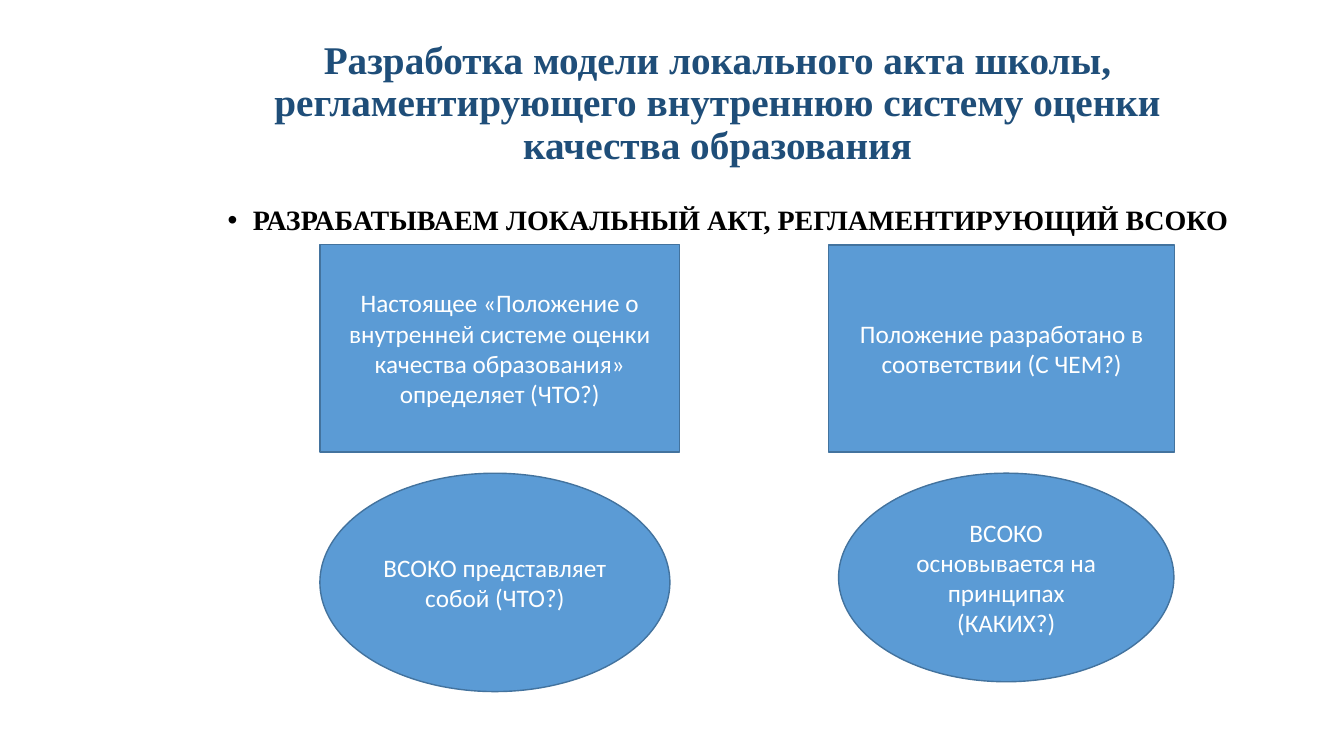
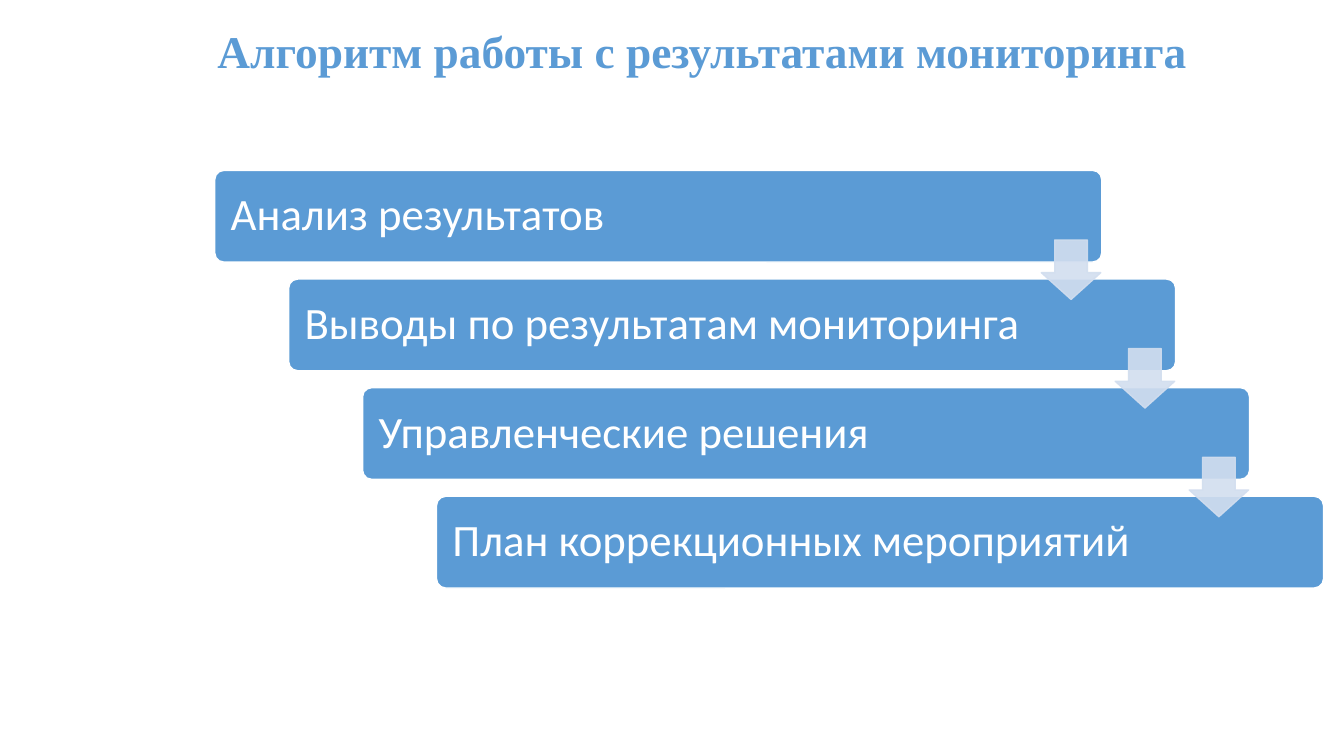
from dataclasses import dataclass

from lxml.etree import SubElement
from pptx import Presentation
from pptx.dml.color import RGBColor
from pptx.enum.shapes import MSO_SHAPE as SHAPE
from pptx.enum.text import MSO_ANCHOR as ANCHOR, MSO_AUTO_SIZE as FIT, PP_ALIGN as ALIGN
from pptx.oxml.ns import qn
from pptx.util import Pt

MODEL_TITLE = ("Разработка модели локального акта школы, регламентирующего "
               "внутреннюю систему оценки качества образования")
MODEL_TASK = "РАЗРАБАТЫВАЕМ ЛОКАЛЬНЫЙ АКТ, РЕГЛАМЕНТИРУЮЩИЙ ВСОКО"
QUESTIONS = [
    (SHAPE.RECTANGLE, (228.5, 174.5, 257, 148.5),
     "Настоящее «Положение о внутренней системе оценки качества образования» определяет (ЧТО?)"),
    (SHAPE.RECTANGLE, (592, 175, 247, 148), "Положение разработано в соответствии (С ЧЕМ?)"),
    (SHAPE.OVAL, (228.5, 338, 250, 156), "ВСОКО представляет собой (ЧТО?)"),
    (SHAPE.OVAL, (599, 338, 239.5, 149), "ВСОКО основывается на принципах (КАКИХ?)"),
]
STEPS_TITLE = "Алгоритм работы с результатами мониторинга"
STEPS = [
    "Анализ результатов",
    "Выводы по результатам мониторинга",
    "Управленческие решения",
    "План коррекционных мероприятий",
]


@dataclass(frozen=True)
class Theme:
    blue: str = "5B9BD5"
    navy: str = "1F4E79"
    edge: str = "43739E"
    pale: str = "D2DEEF"
    white: str = "FFFFFF"
    black: str = "000000"
    serif: str = "Times New Roman"
    sans: str = "Calibri"
    model_title: float = 28
    steps_title: float = 32.4
    task: float = 20
    question: float = 18
    step: float = 32


T = Theme()
STEP_LEFT, STEP_TOP, STEP_W, STEP_H = 153.4, 121.7, 633.6, 65.5
STEP_DX, STEP_DY = 52.8, 77.6
ARROW_DX, ARROW_DY, ARROW_SIZE = 590.4, 49.7, 42.5


def write(sp, text, size, color, font=T.sans, bold=False, align=ALIGN.CENTER,
          anchor=ANCHOR.MIDDLE, spacing=None):
    tf = sp.text_frame
    frame = {"word_wrap": True, "auto_size": FIT.NONE, "vertical_anchor": anchor}
    for name, value in frame.items():
        setattr(tf, name, value)
    p = tf.paragraphs[0]
    p.alignment, p.line_spacing = align, spacing
    r = p.add_run()
    r.text = text
    for name, value in {"size": Pt(size), "name": font, "bold": bold}.items():
        setattr(r.font, name, value)
    r.font.color.rgb = RGBColor.from_string(color)
    return p


def add_title_slide(prs, text, box, size, color):
    s = prs.slides.add_slide(prs.slide_layouts[5])
    title = s.shapes.title
    for name, value in zip(("left", "top", "width", "height"), box):
        setattr(title, name, Pt(value))
    write(title, text, size, color, T.serif, bold=True, spacing=0.9)
    return s


def add_box(s, kind, box, fill, line):
    sp = s.shapes.add_shape(kind, *map(Pt, box))
    sp.shadow.inherit = False
    sp.fill.solid()
    sp.fill.fore_color.rgb = RGBColor.from_string(fill)
    sp.line.color.rgb = RGBColor.from_string(line)
    sp.line.width = Pt(1)
    return sp


def add_bullet(p, indent):
    pPr = p._p.get_or_add_pPr()
    pPr.set("marL", str(Pt(indent)))
    pPr.set("indent", str(-Pt(indent)))
    SubElement(pPr, qn("a:buFont")).set("typeface", "Arial")
    SubElement(pPr, qn("a:buChar")).set("char", "•")


def set_opacity(sp, percent):
    for color in sp._element.spPr.iter(qn("a:srgbClr")):
        SubElement(color, qn("a:alpha")).set("val", str(percent * 1000))


def build_model(prs):
    s = add_title_slide(prs, MODEL_TITLE, (131, 0, 763, 149), T.model_title, T.navy)
    task = s.shapes.add_textbox(*map(Pt, (145.5, 144, 749, 30)))
    p = write(task, MODEL_TASK, T.task, T.black, T.serif, bold=True,
              anchor=ANCHOR.TOP, spacing=0.9)
    add_bullet(p, 18)
    for kind, box, text in QUESTIONS:
        write(add_box(s, kind, box, T.blue, T.edge), text, T.question, T.white)


def build_steps(prs):
    s = add_title_slide(prs, STEPS_TITLE, (96, 16.5, 811, 44), T.steps_title, T.blue)
    corners = [(STEP_LEFT + i * STEP_DX, STEP_TOP + i * STEP_DY) for i in range(len(STEPS))]
    for (x, y), text in zip(corners, STEPS):
        bar = add_box(s, SHAPE.ROUNDED_RECTANGLE, (x, y, STEP_W, STEP_H), T.blue, T.white)
        bar.adjustments[0] = 0.1
        bar.text_frame.margin_left = Pt(9.5)
        write(bar, text, T.step, T.white, align=ALIGN.LEFT, spacing=0.9)
    for x, y in corners[:-1]:
        arrow = add_box(s, SHAPE.DOWN_ARROW,
                        (x + ARROW_DX, y + ARROW_DY, ARROW_SIZE, ARROW_SIZE), T.pale, T.pale)
        arrow.adjustments[0], arrow.adjustments[1] = 0.55, 0.45
        set_opacity(arrow, 90)


def main():
    prs = Presentation()
    prs.slide_width, prs.slide_height = Pt(960), Pt(540)
    build_model(prs)
    build_steps(prs)
    prs.save("out.pptx")


if __name__ == "__main__":
    main()
